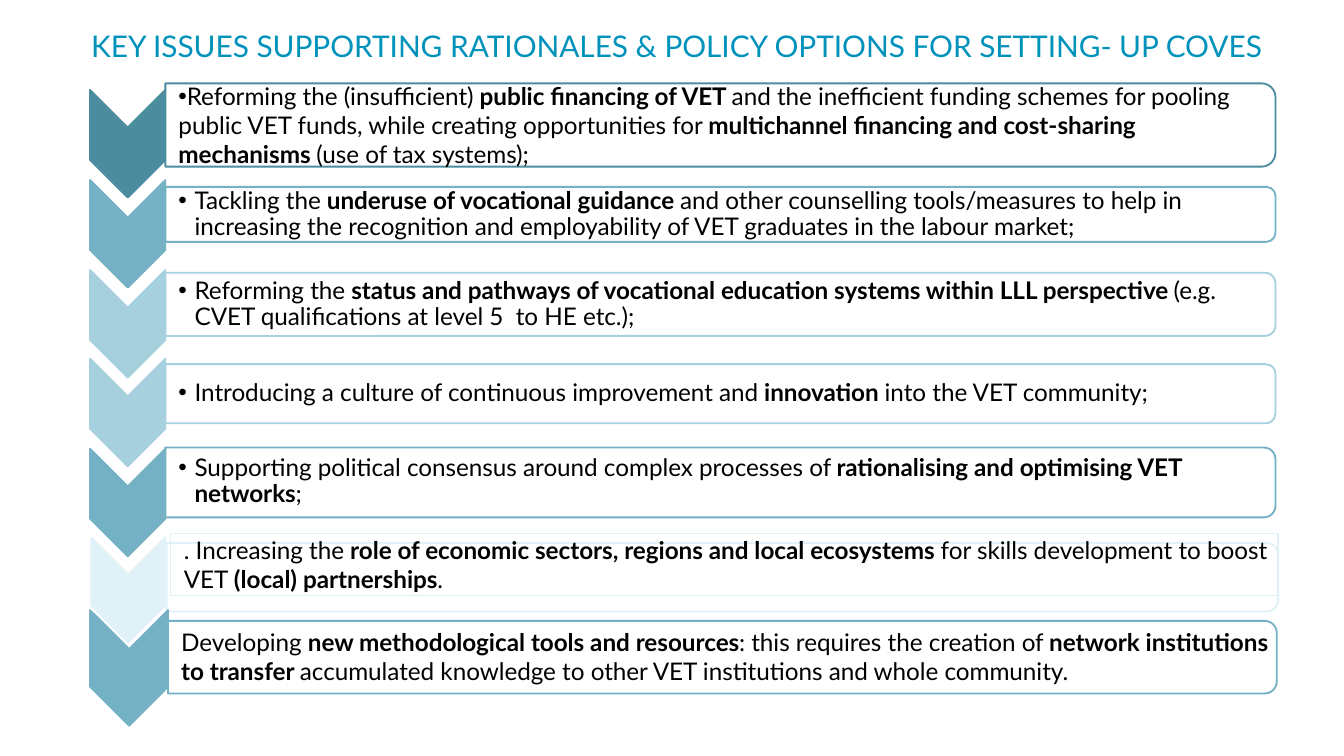
from lxml import etree
from pptx import Presentation
from pptx.dml.color import RGBColor
from pptx.enum.shapes import MSO_SHAPE
from pptx.enum.text import MSO_ANCHOR, MSO_AUTO_SIZE
from pptx.oxml.ns import qn
from pptx.util import Emu, Pt

CHEVRON, BAR, RECT = MSO_SHAPE.CHEVRON, MSO_SHAPE.ROUND_2_SAME_RECTANGLE, MSO_SHAPE.RECTANGLE
MIDDLE, GROW = MSO_ANCHOR.MIDDLE, MSO_AUTO_SIZE.SHAPE_TO_FIT_TEXT
PX = 9144  # 100 px to the inch
TEAL, BLUE, LIGHT, PALE = "4B8D9E", "74B1C4", "A7D0DF", "E0F2F7"


def color(target, value):
    target.rgb = RGBColor.from_string(value)


def add_filled(kind, box, fill, line, weight=1, turned=True):
    """Draw a shape that covers box; a turned one is rotated by 90 degrees."""
    left, top, width, height = box
    if turned:
        left, top = left + (width - height) / 2, top + (height - width) / 2
        width, height = height, width
    shape = slide.shapes.add_shape(kind, *[Emu(round(v * PX)) for v in (left, top, width, height)])
    shape.rotation = 90 if turned else 0
    shape.shadow.inherit = False
    shape.fill.solid()
    color(shape.fill.fore_color, fill)
    color(shape.line.color, line)
    shape.line.width = Pt(weight)
    return shape


# Slide in the 16:9 format
prs = Presentation()
prs.slide_width = 1000 * PX
prs.slide_height = prs.slide_width * 9 // 16
slide = prs.slides.add_slide(prs.slide_layouts[6])

# Title
title = slide.shapes.add_textbox(*[v * PX for v in (58, 19, 911, 34)])
title.text_frame.word_wrap = True
title.text_frame.auto_size = GROW
heading = title.text_frame.paragraphs[0]
heading.line_spacing = 0.9
heading_run = heading.add_run()
heading_run.text = "KEY ISSUES SUPPORTING RATIONALES & POLICY OPTIONS FOR SETTING- UP COVES"
for name, value in {"name": "Lato", "size": Pt(16)}.items():
    setattr(heading_run.font, name, value)
color(heading_run.font.color, "0092BB")

# Issues: colour, chevron, bar, text box, bullet style, wording (bold between **)
COLUMN = [(67, 67 + round(66.75 * i), 56, 80) for i in range(5)]
issues = [
    (TEAL, COLUMN[0], (123, 62, 826, 62), (123, 65, 823, 56), "flush",
     "Reforming the (insufficient) **public financing of VET **and the inefficient funding schemes "
     "for pooling public VET funds, while creating opportunities for **multichannel financing and "
     "cost-sharing mechanisms **(use of tax systems);"),
    (BLUE, COLUMN[1], (123, 139, 826, 41), (123, 141, 824, 37), "hanging",
     "Tackling the **underuse of vocational guidance** and other counselling tools/measures to help "
     "in increasing the recognition and employability of VET graduates in the labour market;"),
    (LIGHT, COLUMN[2], (123, 203, 826, 47), (123, 205, 824, 43), "hanging",
     "Reforming the **status and pathways of vocational education systems within LLL perspective "
     "**(e.g. CVET qualifications at level 5  to HE etc.);"),
    (LIGHT, COLUMN[3], (123, 271, 826, 44), (123, 273, 824, 40), "hanging",
     "Introducing a culture of continuous improvement and **innovation **into the VET community;"),
    (BLUE, COLUMN[4], (123, 333, 826, 52), (123, 335, 823, 47), "hanging",
     "Supporting political consensus around complex processes of **rationalising and optimising "
     "VET networks**;"),
    (PALE, (68, 400, 55, 78), (124, 404, 827, 51), (127, 397, 824, 46), "framed",
     ". Increasing the **role of economic sectors, regions and local ecosystems** for skills "
     "development to boost VET **(local) partnerships**."),
    (BLUE, (67, 454, 58, 86), (125, 462, 825, 54), (125, 464, 823, 49), "plain",
     "Developing **new methodological tools and resources**: this requires the creation of "
     "**network institutions to transfer **accumulated knowledge to other VET institutions and "
     "whole community."),
]
frame_format = {"word_wrap": True, "vertical_anchor": MIDDLE, "margin_left": 10 * PX,
                "margin_top": PX, "margin_right": PX, "margin_bottom": PX}
hanging_format = {"level": 1, "line_spacing": 0.9, "space_after": Pt(2)}

for accent, chevron_box, bar_box, text_box, style, wording in issues:
    # Chevron and rounded bar
    add_filled(CHEVRON, chevron_box, accent, accent)
    if style == "framed":
        add_filled(RECT, (69, 427, 55, 23), accent, accent, 0.75, turned=False)
    bar = add_filled(BAR, bar_box, "FFFFFF", accent)
    white = bar.fill._xPr.find(qn("a:solidFill"))[0]
    etree.SubElement(white, qn("a:alpha")).set("val", "90000")

    # Issue text
    issue = slide.shapes.add_textbox(*[v * PX for v in text_box])
    if style == "framed":
        color(issue.line.color, accent)
        issue.line.width = Pt(0.75)
    for name, value in frame_format.items():
        setattr(issue.text_frame, name, value)
    paragraph = issue.text_frame.paragraphs[0]
    if style in ("flush", "hanging"):
        properties = paragraph._p.get_or_add_pPr()
        indent = 12 * PX if style == "hanging" else 0
        properties.set("marL", str(indent))
        properties.set("indent", str(-indent))
        etree.SubElement(properties, qn("a:buFont")).set("typeface", "Arial")
        etree.SubElement(properties, qn("a:buChar")).set("char", "•")
    if style == "hanging":
        for name, value in hanging_format.items():
            setattr(paragraph, name, value)
    for i, part in enumerate(wording.split("**")):
        run = paragraph.add_run()
        run.text = part
        for name, value in {"name": "Lato", "size": Pt(13), "bold": i % 2 == 1}.items():
            setattr(run.font, name, value)
        color(run.font.color, "000000")

prs.save("out.pptx")
